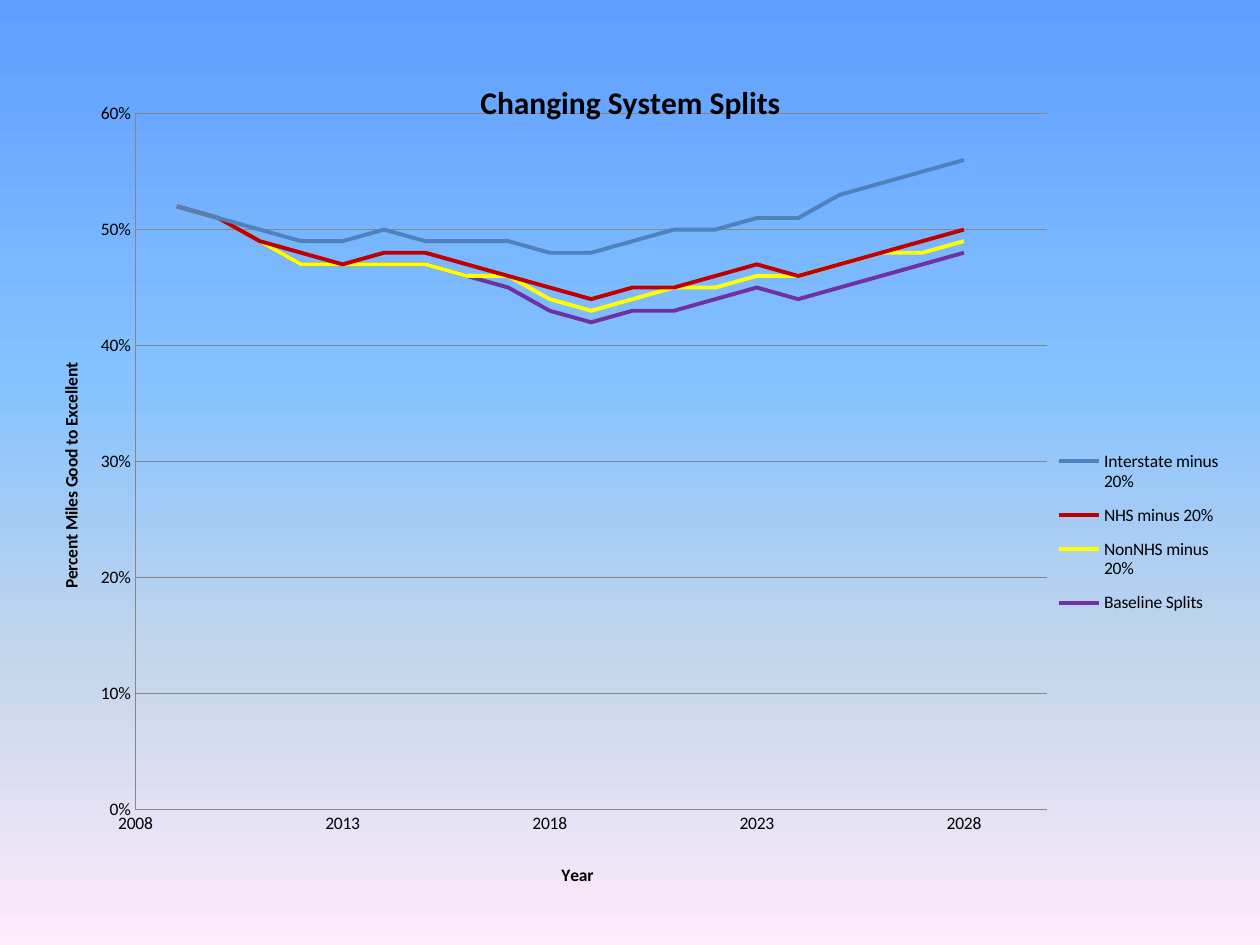
"""Build a slide with a scatter chart of pavement condition under changing system splits."""
from dataclasses import dataclass
from typing import Optional

from lxml.etree import SubElement
from pptx import Presentation
from pptx.chart.data import XyChartData
from pptx.dml.color import RGBColor
from pptx.enum.chart import XL_CHART_TYPE, XL_LEGEND_POSITION, XL_TICK_MARK
from pptx.oxml import parse_xml
from pptx.oxml.ns import nsdecls, qn
from pptx.util import Pt

BLACK = RGBColor(0x00, 0x00, 0x00)
GRAY = RGBColor(0x86, 0x86, 0x86)
BLUE = RGBColor(0x4F, 0x81, 0xBD)
RED = RGBColor(0xC0, 0x00, 0x00)
YELLOW = RGBColor(0xFF, 0xFF, 0x00)
PURPLE = RGBColor(0x70, 0x30, 0xA0)
SKY = [
    (0, RGBColor(0x5E, 0x9E, 0xFF)),
    (40, RGBColor(0x85, 0xC2, 0xFF)),
    (70, RGBColor(0xC4, 0xD6, 0xEB)),
    (100, RGBColor(0xFF, 0xEB, 0xFA)),
]
FONT = "Calibri"
FIRST_YEAR = 2009


@dataclass
class Split:
    name: str
    color: RGBColor
    percents: list[int]


@dataclass
class Frame:
    x: float
    y: float
    w: Optional[float] = None
    h: Optional[float] = None
    inner: bool = False


SPLITS = [
    Split("Interstate minus 20%", BLUE,
          [52, 51, 50, 49, 49, 50, 49, 49, 49, 48, 48, 49, 50, 50, 51, 51, 53, 54, 55, 56]),
    Split("NHS minus 20%", RED,
          [52, 51, 49, 48, 47, 48, 48, 47, 46, 45, 44, 45, 45, 46, 47, 46, 47, 48, 49, 50]),
    Split("NonNHS minus 20%", YELLOW,
          [52, 51, 49, 47, 47, 47, 47, 46, 46, 44, 43, 44, 45, 45, 46, 46, 47, 48, 48, 49]),
    Split("Baseline Splits", PURPLE,
          [52, 51, 49, 47, 47, 47, 47, 46, 45, 43, 42, 43, 43, 44, 45, 44, 45, 46, 47, 48]),
]


def fill_background(s) -> None:
    fill = s.background.fill
    fill.gradient()
    fill.gradient_angle = 270
    stops = s.element.find(".//" + qn("a:gsLst"))
    for gs in list(stops):
        stops.remove(gs)
    for pos, color in SKY:
        gs = SubElement(stops, qn("a:gs"), pos=str(pos * 1000))
        SubElement(gs, qn("a:srgbClr"), val=str(color))


def place(element, index: int, frame: Frame) -> None:
    old = element.find(qn("c:layout"))
    if old is not None:
        element.remove(old)
    layout = parse_xml(f"<c:layout {nsdecls('c')}><c:manualLayout/></c:layout>")
    manual = layout[0]
    if frame.inner:
        SubElement(manual, qn("c:layoutTarget"), val="inner")
    for mode in ("xMode", "yMode"):
        SubElement(manual, qn(f"c:{mode}"), val="edge")
    for key in ("x", "y", "w", "h"):
        value = getattr(frame, key)
        if value is not None:
            SubElement(manual, qn(f"c:{key}"), val=str(value))
    element.insert(index, layout)


def write_title(title, text: str, size: float, frame: Frame) -> None:
    p = title.text_frame.paragraphs[0]
    r = p.add_run()
    r.text = text
    r.font.name = FONT
    r.font.size = Pt(size)
    r.font.bold = True
    r.font.color.rgb = BLACK
    place(title.element, 1, frame)


def format_axis(axis, low: float, high: float, step: float, number_format: str) -> None:
    axis.minimum_scale, axis.maximum_scale, axis.major_unit = low, high, step
    axis.major_tick_mark = axis.minor_tick_mark = XL_TICK_MARK.NONE
    axis.tick_labels.number_format = number_format
    axis.tick_labels.number_format_is_linked = False
    axis.format.line.color.rgb = GRAY
    axis.format.line.width = Pt(0.75)


def add_splits_chart(s) -> None:
    data = XyChartData()
    for split in SPLITS:
        series = data.add_series(split.name)
        for year, percent in enumerate(split.percents, FIRST_YEAR):
            series.add_data_point(year, percent / 100)
    chart = s.shapes.add_chart(XL_CHART_TYPE.XY_SCATTER_LINES_NO_MARKERS,
                               Pt(18.72), Pt(23.04), Pt(682.56), Pt(493.2), data).chart
    chart.font.name = FONT
    chart.font.size = Pt(10)
    chart.font.color.rgb = BLACK
    write_title(chart.chart_title, "Changing System Splits", 18, Frame(0.37, 0.04))

    plot = chart.plots[0]
    plot.vary_by_categories = False
    for series, split in zip(plot.series, SPLITS):
        series.smooth = False
        series.format.line.color.rgb = split.color
        series.format.line.width = Pt(2.25)

    years, miles = chart.category_axis, chart.value_axis
    format_axis(years, 2008, 2030, 5, "General")
    years.has_major_gridlines = False
    write_title(years.axis_title, "Year", 10, Frame(0.44, 0.95))
    format_axis(miles, 0, 0.6, 0.1, "0%")
    miles.has_major_gridlines = True
    miles.major_gridlines.format.line.color.rgb = GRAY
    miles.major_gridlines.format.line.width = Pt(0.75)
    write_title(miles.axis_title, "Percent Miles Good to Excellent", 10, Frame(0.02, 0.37))

    chart.has_legend = True
    chart.legend.position = XL_LEGEND_POSITION.RIGHT
    chart.legend.include_in_layout = False
    place(chart.element.find(".//" + qn("c:legend")), 1, Frame(0.86, 0.46, 0.14, 0.22))
    place(chart.element.find(".//" + qn("c:plotArea")), 0,
          Frame(0.086, 0.085, 0.763, 0.806, inner=True))


def main() -> None:
    prs = Presentation()
    prs.slide_width, prs.slide_height = Pt(720), Pt(540)
    s = prs.slides.add_slide(prs.slide_layouts[6])
    fill_background(s)
    add_splits_chart(s)
    prs.save("out.pptx")


if __name__ == "__main__":
    main()
